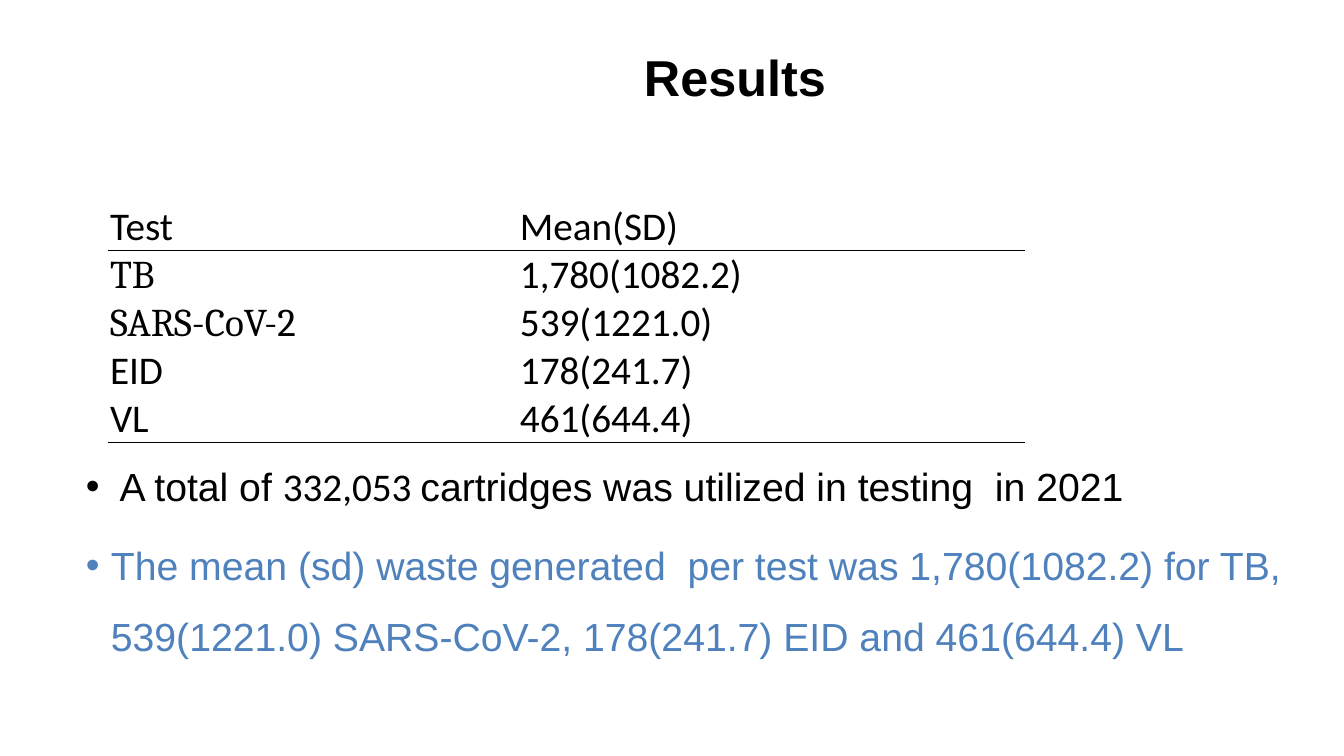
from lxml import etree
from pptx import Presentation
from pptx import util as u
from pptx.dml.color import RGBColor
from pptx.enum import text
from pptx.oxml.ns import qn

PX = 914400 / 100.8

THEME = {
    "black": "000000",
    "blue": "4F81BD",
    "sans": "Arial",
    "table": "Calibri",
    "serif": "Cambria",
    "title_size": 36,
    "body_size": 28,
    "rule": 0.5,
}

ROWS = [
    ("Test", "Mean(SD)"),
    ("TB", "1,780(1082.2)"),
    ("SARS-CoV-2", "539(1221.0)"),
    ("EID", "178(241.7)"),
    ("VL", "461(644.4)"),
]
SERIF_TESTS = {"TB", "SARS-CoV-2"}

TOTAL_RUNS = [
    (" A total of ", THEME["sans"]),
    ("332,053 ", THEME["table"]),
    ("cartridges was utilized in testing  in 2021", THEME["sans"]),
]
WASTE_RUNS = [
    ("The mean (sd) waste generated  per test was 1,780(1082.2) for TB, "
     "539(1221.0) SARS-CoV-2, 178(241.7) EID and 461(644.4) VL", THEME["sans"]),
]


def px(length):
    return u.Emu(round(length * PX))


def apply_format(target, values):
    for name, value in values.items():
        setattr(target, name, value)


def add_run(paragraph, content, font, color, size, bold=False):
    run = paragraph.add_run()
    run.text = content
    apply_format(run.font, {"name": font, "size": u.Pt(size), "bold": bold})
    run.font.color.rgb = RGBColor.from_string(color)


def add_text_frame(slide, box, frame_format):
    frame = slide.shapes.add_textbox(*map(px, box)).text_frame
    apply_format(frame, {"word_wrap": True, **frame_format})
    return frame


def add_title(slide, content):
    frame = add_text_frame(slide, (420, 42, 630, 68),
                           {"vertical_anchor": text.MSO_ANCHOR.MIDDLE})
    paragraph = frame.paragraphs[0]
    paragraph.alignment = text.PP_ALIGN.CENTER
    add_run(paragraph, content, THEME["sans"], THEME["black"],
            THEME["title_size"], True)


def add_bullet(paragraph, runs, color):
    apply_format(paragraph, {"line_spacing": 1.5, "space_before": u.Pt(6)})
    properties = paragraph._p.get_or_add_pPr()
    properties.set("marL", str(px(25)))
    properties.set("indent", str(px(-25)))
    etree.SubElement(properties, qn("a:buFont"), typeface=THEME["sans"])
    etree.SubElement(properties, qn("a:buChar"), char="•")
    for content, font in runs:
        add_run(paragraph, content, font, color, THEME["body_size"])


def add_findings(slide):
    frame = add_text_frame(slide, (76, 143, 1227, 580), {
        "vertical_anchor": text.MSO_ANCHOR.BOTTOM, "margin_bottom": px(64)})
    add_bullet(frame.paragraphs[0], TOTAL_RUNS, THEME["black"])
    add_bullet(frame.add_paragraph(), WASTE_RUNS, THEME["blue"])


def add_border(cell, side):
    line = etree.Element(qn("a:" + side), w=str(u.Pt(THEME["rule"])))
    fill = etree.SubElement(line, qn("a:solidFill"))
    etree.SubElement(fill, qn("a:srgbClr"), val=THEME["black"])
    cell._tc.get_or_add_tcPr().insert(0, line)


def fill_cell(cell, content):
    apply_format(cell, {
        "vertical_anchor": text.MSO_ANCHOR.BOTTOM, "margin_left": px(1),
        "margin_right": px(1), "margin_top": px(1), "margin_bottom": 0})
    cell.fill.background()
    font = THEME["serif"] if content in SERIF_TESTS else THEME["table"]
    add_run(cell.text_frame.paragraphs[0], content, font,
            THEME["black"], THEME["body_size"])


def add_results_table(slide):
    widths, row_height = (410, 505), 45
    box = (109, 202, sum(widths), row_height * len(ROWS))
    table = slide.shapes.add_table(len(ROWS), len(widths), *map(px, box)).table
    apply_format(table, {"first_row": False, "horz_banding": False})
    for column, width in zip(table.columns, widths):
        column.width = px(width)
    for row_index, values in enumerate(ROWS):
        for column_index, content in enumerate(values):
            cell = table.cell(row_index, column_index)
            fill_cell(cell, content)
            if row_index in (0, len(ROWS) - 1):
                add_border(cell, "lnB")
            if row_index == 1:
                add_border(cell, "lnT")


def main():
    presentation = Presentation()
    apply_format(presentation, {"slide_width": px(1344), "slide_height": px(756)})
    slide = presentation.slides.add_slide(presentation.slide_layouts[6])
    add_title(slide, "Results")
    add_findings(slide)
    add_results_table(slide)
    presentation.save("out.pptx")


if __name__ == "__main__":
    main()
